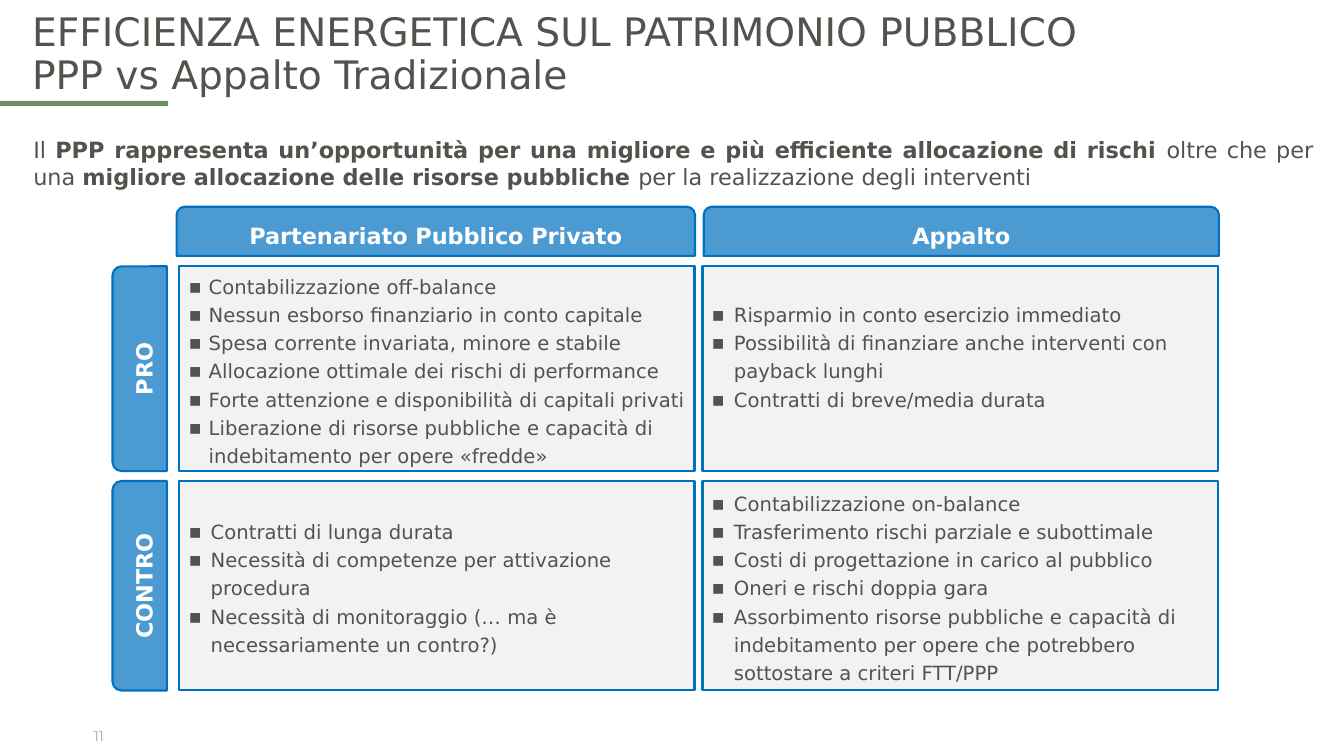
from lxml import etree
from pptx import Presentation
from pptx import util as u
from pptx.dml.color import RGBColor
from pptx.enum import shapes, text
from pptx.oxml.ns import qn

# Content
TITLE = "EFFICIENZA ENERGETICA SUL PATRIMONIO PUBBLICO\vPPP vs Appalto Tradizionale"
INTRO = [  # text, bold
    ("Il ", False),
    ("PPP rappresenta un’opportunità per una migliore e più efficiente allocazione di rischi ", True),
    ("oltre che per una ", False),
    ("migliore allocazione delle risorse pubbliche ", True),
    ("per la realizzazione degli interventi", False),
]
PAGE = "11"
HEADERS = [("Partenariato Pubblico Privato", 4.45, 13.06), ("Appalto", 17.73, 12.98)]  # left, width
ROWS = [("PRO", 6.71, 5.16), ("CONTRO", 12.12, 5.28)]  # top, height
COL_LEFTS, COL_W = [4.52, 17.7], 12.98
WIDE, NARROW = (0.79, 0.56), (0.74, 0.51)  # text indent, bullet hang
CELLS = {  # (row, column): indents, bottom inset, items
    (0, 0): (NARROW, 0, [
        "Contabilizzazione off-balance",
        "Nessun esborso finanziario in conto capitale",
        "Spesa corrente invariata, minore e stabile",
        "Allocazione ottimale dei rischi di performance",
        "Forte attenzione e disponibilità di capitali privati",
        "Liberazione di risorse pubbliche e capacità di indebitamento per opere «fredde»"]),
    (0, 1): (WIDE, 0.71, [
        "Risparmio in conto esercizio immediato",
        "Possibilità di finanziare anche interventi con payback lunghi",
        "Contratti di breve/media durata"]),
    (1, 0): (WIDE, 0, [
        "Contratti di lunga durata",
        "Necessità di competenze per attivazione procedura",
        "Necessità di monitoraggio (… ma è necessariamente un contro?)"]),
    (1, 1): (WIDE, 0, [
        "Contabilizzazione on-balance",
        "Trasferimento rischi parziale e subottimale",
        "Costi di progettazione in carico al pubblico",
        "Oneri e rischi doppia gara",
        "Assorbimento risorse pubbliche e capacità di indebitamento per opere "
        "che potrebbero sottostare a criteri FTT/PPP"]),
}
FONT, INK, BLUE, WHITE, PANEL, GREEN, GREY = (
    "DejaVu Sans", "53534E", "0070C0", "FFFFFF", "F2F2F2", "708C67", "A6A6A6")
AL, ANCHOR, SHAPE = text.PP_ALIGN, text.MSO_ANCHOR, shapes.MSO_SHAPE

prs = Presentation()
prs.slide_width, prs.slide_height = u.Cm(33.86), u.Cm(19.05)
s = prs.slides.add_slide(prs.slide_layouts[6])


# Helpers
def paint(target, color):
    if hasattr(target, "solid"):
        target.solid()
        target = target.fore_color
    target.rgb = RGBColor.from_string(color)


def frame(sp, insets, anchor):
    tf = sp.text_frame
    tf.word_wrap, tf.vertical_anchor = True, anchor
    for side, size in zip(("left", "top", "right", "bottom"), insets):
        setattr(tf, "margin_" + side, u.Cm(size))
    return tf


def write(p, runs, size, color=INK, name=FONT, **layout):
    for key, value in layout.items():
        setattr(p, key, value)
    for words, bold in runs:
        p.add_run().text = words
    for r, (_, bold) in zip(p.runs, runs):
        for key, value in {"name": name, "size": u.Pt(size), "bold": bold}.items():
            setattr(r.font, key, value)
        paint(r.font.color, color)


def textbox(box, insets, anchor=ANCHOR.TOP):
    return frame(s.shapes.add_textbox(*map(u.Cm, box)), insets, anchor)


def block(kind, box, fill, line=BLUE):
    sp = s.shapes.add_shape(kind, *map(u.Cm, box))
    sp.shadow.inherit = False
    paint(sp.fill, fill)
    if line:
        paint(sp.line.fill, line)
        sp.line.width = u.Pt(1.5)
    else:
        sp.line.fill.background()
    return sp


def tab(label, box, rotation=0):
    sp = block(SHAPE.ROUND_2_SAME_RECTANGLE, box, BLUE)
    sp.rotation = rotation
    color = sp.fill._xPr.find(qn("a:solidFill"))[0]
    etree.SubElement(color, qn("a:alpha"), val="70000")
    tf = frame(sp, (0.51, 0.13, 0.51, 0.13), ANCHOR.MIDDLE)
    write(tf.paragraphs[0], [(label, True)], 16, WHITE, alignment=AL.CENTER, line_spacing=1.2)


def bullet(p, indent, hang):
    pPr = p._p.get_or_add_pPr()
    pPr.set("marL", str(u.Cm(indent)))
    pPr.set("indent", str(-u.Cm(hang)))
    etree.SubElement(pPr, qn("a:buFont"), typeface=FONT)
    etree.SubElement(pPr, qn("a:buChar"), char="▪")


# Title, rule, page number and introduction
block(SHAPE.RECTANGLE, (0, 2.54, 4.24, 0.13), GREEN, None)
p = textbox((0.56, 0.2, 29, 2.7), (0.25, 0.13, 0.25, 0.13)).paragraphs[0]
p.text = TITLE
for r in p.runs:
    r.font.name, r.font.size = FONT, u.Pt(28)
    paint(r.font.color, INK)
p.line_spacing = 0.9
tf = textbox((1.65, 18.19, 1.22, 0.69), (0.25, 0.13, 0.25, 0.13), ANCHOR.MIDDLE)
write(tf.paragraphs[0], [(PAGE, False)], 10, GREY, "Montserrat", alignment=AL.RIGHT)
tf = textbox((0.84, 3.43, 32.25, 1.37), (0, 0, 0, 0))
write(tf.paragraphs[0], INTRO, 16, alignment=AL.JUSTIFY)

# Comparison cells
for (row, col), (indents, bottom, items) in CELLS.items():
    _, top, height = ROWS[row]
    sp = block(SHAPE.RECTANGLE, (COL_LEFTS[col], top, COL_W, height), PANEL)
    tf = frame(sp, (0, 0, 0, bottom), ANCHOR.MIDDLE)
    for i, item in enumerate(items):
        p = tf.add_paragraph() if i else tf.paragraphs[0]
        bullet(p, *indents)
        write(p, [(item, False)], 14, alignment=AL.LEFT, line_spacing=1.2)

# Column headers and row labels turned about their centres
for label, left, width in HEADERS:
    tab(label, (left, 5.21, width, 1.24))
LABEL_MID, LABEL_W = 3.52, 1.37
for label, top, height in ROWS:
    tab(label, (LABEL_MID - height / 2, top + (height - LABEL_W) / 2, height, LABEL_W), 270)

prs.save("out.pptx")
